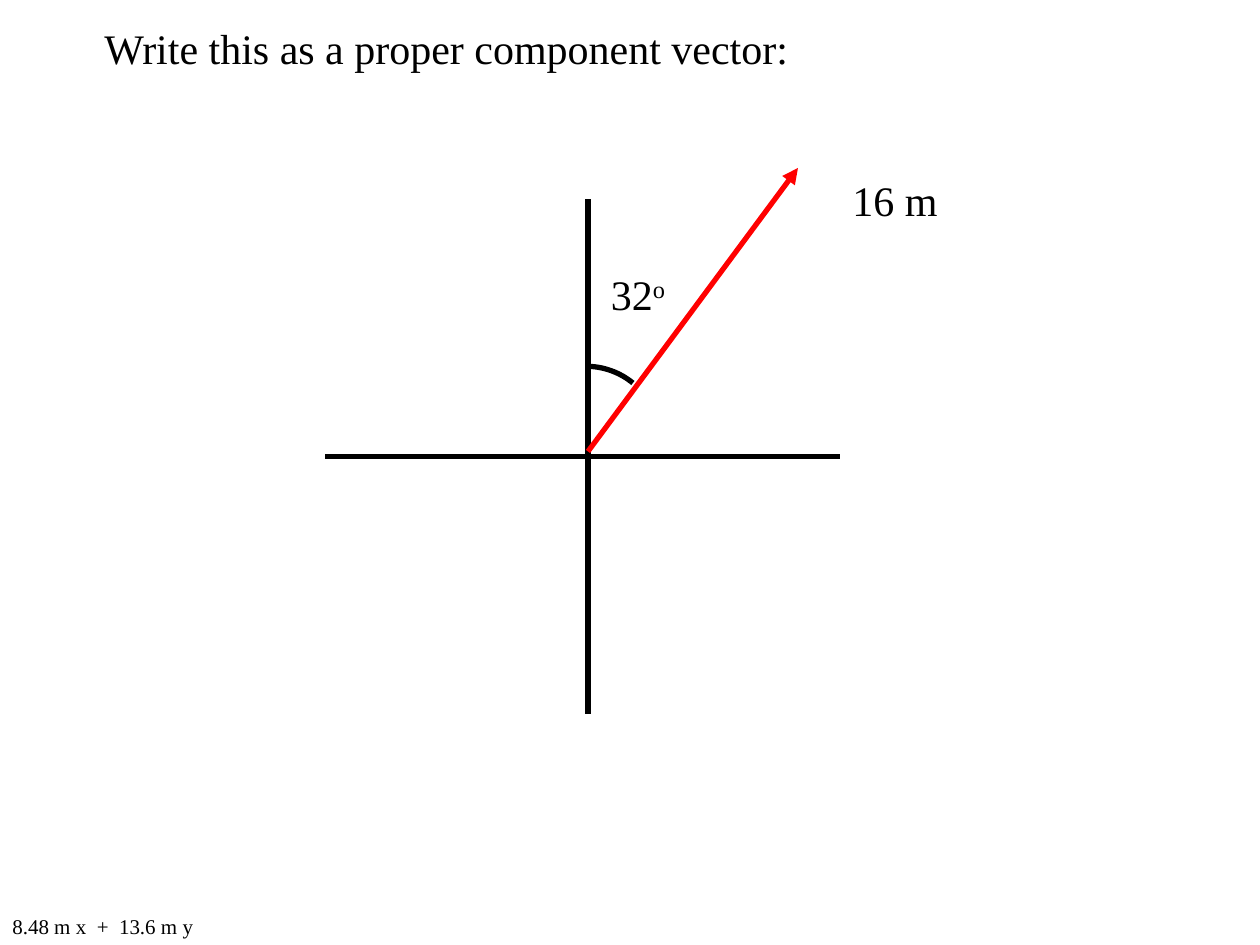
from lxml.etree import SubElement
from pptx import Presentation
from pptx.dml.color import RGBColor
from pptx.enum.shapes import MSO_CONNECTOR, MSO_SHAPE
from pptx.enum.text import MSO_AUTO_SIZE
from pptx.oxml.ns import qn
from pptx.util import Pt

COLORS = {"ink": "000000", "vector": "FF0000"}
FONT = "Times New Roman"

presentation = Presentation()
presentation.slide_width = Pt(720)
presentation.slide_height = Pt(540)
slide = presentation.slides.add_slide(presentation.slide_layouts[6])


def add_line(x1, y1, x2, y2, color):
    connector = slide.shapes.add_connector(
        MSO_CONNECTOR.STRAIGHT, Pt(x1), Pt(y1), Pt(x2), Pt(y2)
    )
    connector.line.color.rgb = RGBColor.from_string(COLORS[color])
    connector.line.width = Pt(3)
    SubElement(connector._element.spPr, qn("a:effectLst"))
    return connector


def add_label(text, left, top, width, height, size):
    box = slide.shapes.add_textbox(Pt(left), Pt(top), Pt(width), Pt(height))
    box.text_frame.word_wrap = False
    box.text_frame.auto_size = MSO_AUTO_SIZE.SHAPE_TO_FIT_TEXT
    paragraph = box.text_frame.paragraphs[0]
    paragraph.add_run().text = text
    paragraph.font.name = FONT
    paragraph.font.size = Pt(size)
    paragraph.font.color.rgb = RGBColor.from_string(COLORS["ink"])
    return paragraph


add_line(186, 261, 480, 261, "ink")
add_line(336, 114, 336, 408, "ink")
add_label("Write this as a proper component vector:", 52.5, 9.5, 409, 36, 24)

vector = add_line(336, 258, 456, 96, "vector")
SubElement(vector.line._get_or_add_ln(), qn("a:tailEnd"), type="triangle")

radius = 42
arc = slide.shapes.add_shape(
    MSO_SHAPE.ARC, Pt(335 - radius), Pt(251.3 - radius), Pt(2 * radius), Pt(2 * radius)
)
start_degrees, end_degrees = 273, 309.4
arc.adjustments[0] = start_degrees * 0.6
arc.adjustments[1] = end_degrees * 0.6
arc.shadow.inherit = False
arc.fill.background()
arc.line.color.rgb = RGBColor.from_string(COLORS["ink"])
arc.line.width = Pt(3)

angle = add_label("32", 342, 150, 46.5, 36, 24)
degree = angle.add_run()
degree.text = "o"
degree._r.get_or_add_rPr().set("baseline", "30000")

add_label("16 m", 480, 96, 63.5, 36, 24)
add_label("8.48 m x  +  13.6 m y", 0, 518.4, 118.5, 21.6, 12)

presentation.save("out.pptx")
